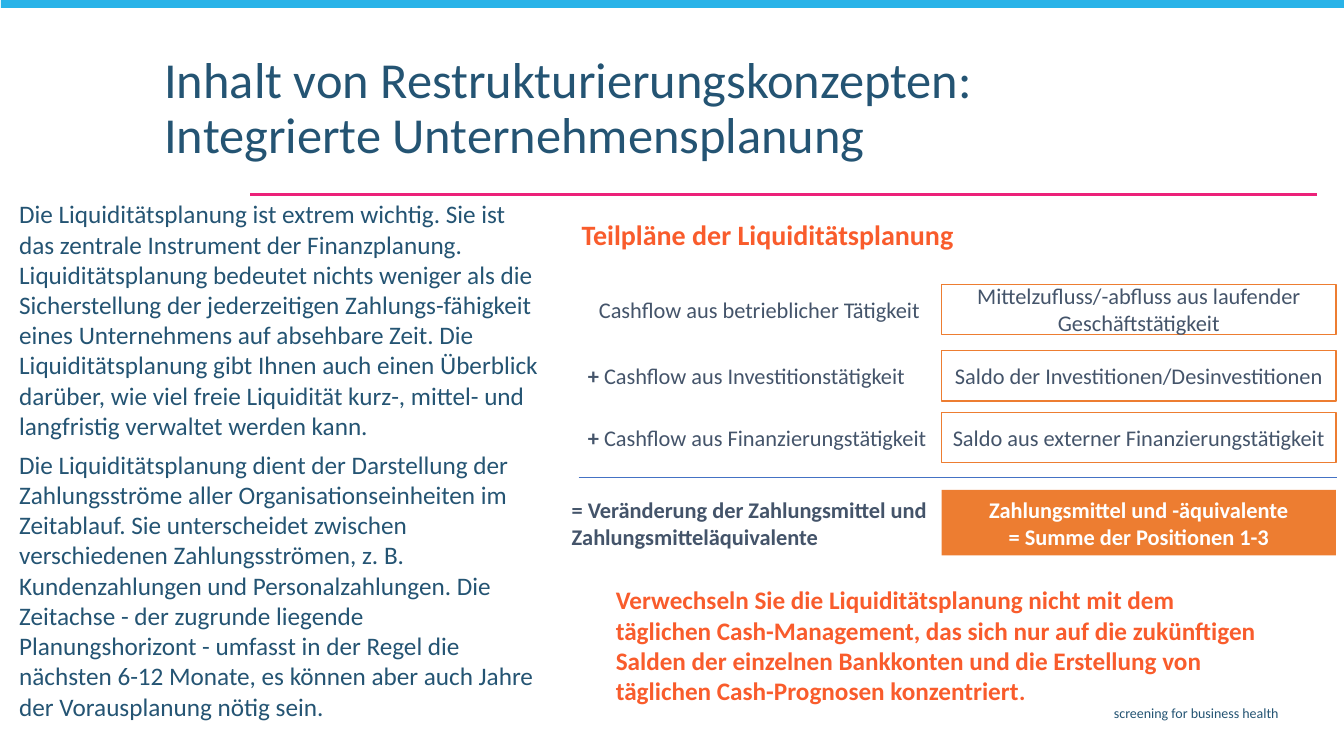
from pptx import Presentation
from pptx.dml.color import RGBColor
from pptx.enum.shapes import MSO_CONNECTOR, MSO_SHAPE
from pptx.enum.text import MSO_ANCHOR, MSO_AUTO_SIZE, PP_ALIGN
from pptx.oxml.ns import qn
from pptx.util import Inches, Pt
from lxml.etree import SubElement

HUES = {"navy": "245473", "sky": "29B3E8", "pink": "EC2179", "slate": "44546A",
        "coral": "F95C2C", "orange": "ED7D31", "blue": "4472C4", "white": "FFFFFF"}

TITLE = "Inhalt von Restrukturierungskonzepten: Integrierte Unternehmensplanung"
BODY = [
    "Die Liquiditätsplanung ist extrem wichtig. Sie ist das zentrale Instrument der "
    "Finanzplanung. Liquiditätsplanung bedeutet nichts weniger als die Sicherstellung der "
    "jederzeitigen Zahlungs-fähigkeit eines Unternehmens auf absehbare Zeit. Die "
    "Liquiditätsplanung gibt Ihnen auch einen Überblick darüber, wie viel freie Liquidität "
    "kurz-, mittel- und langfristig verwaltet werden kann.",
    "Die Liquiditätsplanung dient der Darstellung der Zahlungsströme aller "
    "Organisationseinheiten im Zeitablauf. Sie unterscheidet zwischen verschiedenen "
    "Zahlungsströmen, z. B. Kundenzahlungen und Personalzahlungen. Die Zeitachse - der "
    "zugrunde liegende Planungshorizont - umfasst in der Regel die nächsten 6-12 Monate, "
    "es können aber auch Jahre der Vorausplanung nötig sein.",
]
HEAD = "Teilpläne der Liquiditätsplanung"
WARN = ("Verwechseln Sie die Liquiditätsplanung nicht mit dem täglichen Cash-Management, "
        "das sich nur auf die zukünftigen Salden der einzelnen Bankkonten und die "
        "Erstellung von täglichen Cash-Prognosen konzentriert")
FOOT = "screening for business health"

PLANS = [
    {"left": 5.67, "top": 2.82, "pad": 0.27,
     "label": [("Cashflow aus betrieblicher Tätigkeit", False)],
     "note": ["Mittelzufluss/-abfluss aus laufender Geschäftstätigkeit"]},
    {"left": 5.75, "top": 3.48, "pad": 0.08,
     "label": [("+ ", True), ("Cashflow aus Investitionstätigkeit", False)],
     "note": ["Saldo der Investitionen/Desinvestitionen"]},
    {"left": 5.75, "top": 4.09, "pad": 0.08,
     "label": [("+ ", True), ("Cashflow aus Finanzierungstätigkeit", False)],
     "note": ["Saldo aus externer Finanzierungstätigkeit"]},
    {"left": 5.59, "top": 4.86, "pad": 0.08, "sum": True,
     "label": [("= Veränderung der Zahlungsmittel und Zahlungsmitteläquivalente", True)],
     "note": ["Zahlungsmittel und -äquivalente", "= Summe der Positionen 1-3"]},
]
NOTE_X, BOX_W = 9.34, 3.91

deck = Presentation()
deck.slide_width, deck.slide_height = Inches(13.33), Inches(7.5)
slide = deck.slides.add_slide(deck.slide_layouts[1])
shapes = slide.shapes


def hue(name):
    return RGBColor.from_string(HUES[name])


def write(para, text, size, color, bold=False):
    run = para.add_run()
    run.text = text
    font = run.font
    font.name, font.size, font.bold = "Calibri", Pt(size), bold
    font.color.rgb = hue(color)


def place(shape, *spot):
    shape.left, shape.top, shape.width, shape.height = map(Inches, spot)


def frame(shape, anchor=MSO_ANCHOR.TOP):
    text = shape.text_frame
    text.word_wrap = True
    text.auto_size = MSO_AUTO_SIZE.NONE
    text.vertical_anchor = anchor
    return text


def label(*spot, anchor=MSO_ANCHOR.TOP):
    return frame(shapes.add_textbox(*map(Inches, spot)), anchor).paragraphs[0]


def block(spot, fill, edge=None):
    shape = shapes.add_shape(MSO_SHAPE.RECTANGLE, *map(Inches, spot))
    shape.shadow.inherit = False
    shape.fill.solid()
    shape.fill.fore_color.rgb = hue(fill)
    if edge:
        shape.line.color.rgb = hue(edge)
        shape.line.width = Pt(1)
    else:
        shape.line.fill.background()
    return shape


def cell(spot, fill, edge, align, pad=0.08):
    text = frame(block(spot, fill, edge), MSO_ANCHOR.MIDDLE)
    text.margin_left = Inches(pad)
    text.margin_top = text.margin_right = text.margin_bottom = Inches(0.08)
    para = text.paragraphs[0]
    para.alignment = align
    return para


def rule(start, end, y, color, width):
    line = shapes.add_connector(MSO_CONNECTOR.STRAIGHT, Inches(start), Inches(y),
                                Inches(end), Inches(y))
    line.line.color.rgb = hue(color)
    line.line.width = Pt(width)
    SubElement(line._element.spPr, qn("a:effectLst"))


rule(13.06, 2.48, 1.93, "pink", 1.5)
block((0.01, -0.02, 13.34, 0.1), "sky")

title = shapes.title
place(title, 1.53, 0.5, 8.85, 1.2)
para = frame(title).paragraphs[0]
para.alignment = PP_ALIGN.LEFT
para.line_spacing = 0.9
write(para, TITLE, 36, "navy")

body = slide.placeholders[1]
place(body, 0.1, 1.93, 5.35, 5.32)
text = frame(body)
text.margin_left = text.margin_right = Inches(0.09)
text.margin_top = text.margin_bottom = Inches(0.04)
for i, words in enumerate(BODY):
    para = text.add_paragraph() if i else text.paragraphs[0]
    props = para._p.get_or_add_pPr()
    props.set("marL", "0")
    props.set("indent", "0")
    SubElement(props, qn("a:buNone"))
    para.space_before = Pt(6 if i else 0)
    write(para, words, 18, "navy")

for plan in PLANS:
    high = 0.65 if plan.get("sum") else 0.5
    para = cell((plan["left"], plan["top"], BOX_W, high), "white", "white",
                PP_ALIGN.LEFT, plan["pad"])
    for words, bold in plan["label"]:
        write(para, words, 16, "slate", bold)

for plan in PLANS:
    total = plan.get("sum", False)
    high = 0.65 if total else 0.5
    fill, edge, ink = ("orange", None, "white") if total else ("white", "orange", "slate")
    para = cell((NOTE_X, plan["top"], BOX_W, high), fill, edge, PP_ALIGN.CENTER)
    for i, words in enumerate(plan["note"]):
        if i:
            para.add_line_break()
        write(para, words, 16, ink, total)

rule(5.74, 13.26, 4.74, "blue", 0.5)
write(label(5.67, 2.1, 4.27, 0.44, anchor=MSO_ANCHOR.BOTTOM), HEAD, 20, "coral", True)

para = label(6.01, 5.75, 6.67, 1.01)
write(para, WARN, 18, "coral", True)
write(para, ".", 17, "coral", True)

para = label(3.65, 6.94, 9.13, 0.29)
para.alignment = PP_ALIGN.RIGHT
write(para, FOOT, 10, "navy")

deck.save("out.pptx")
